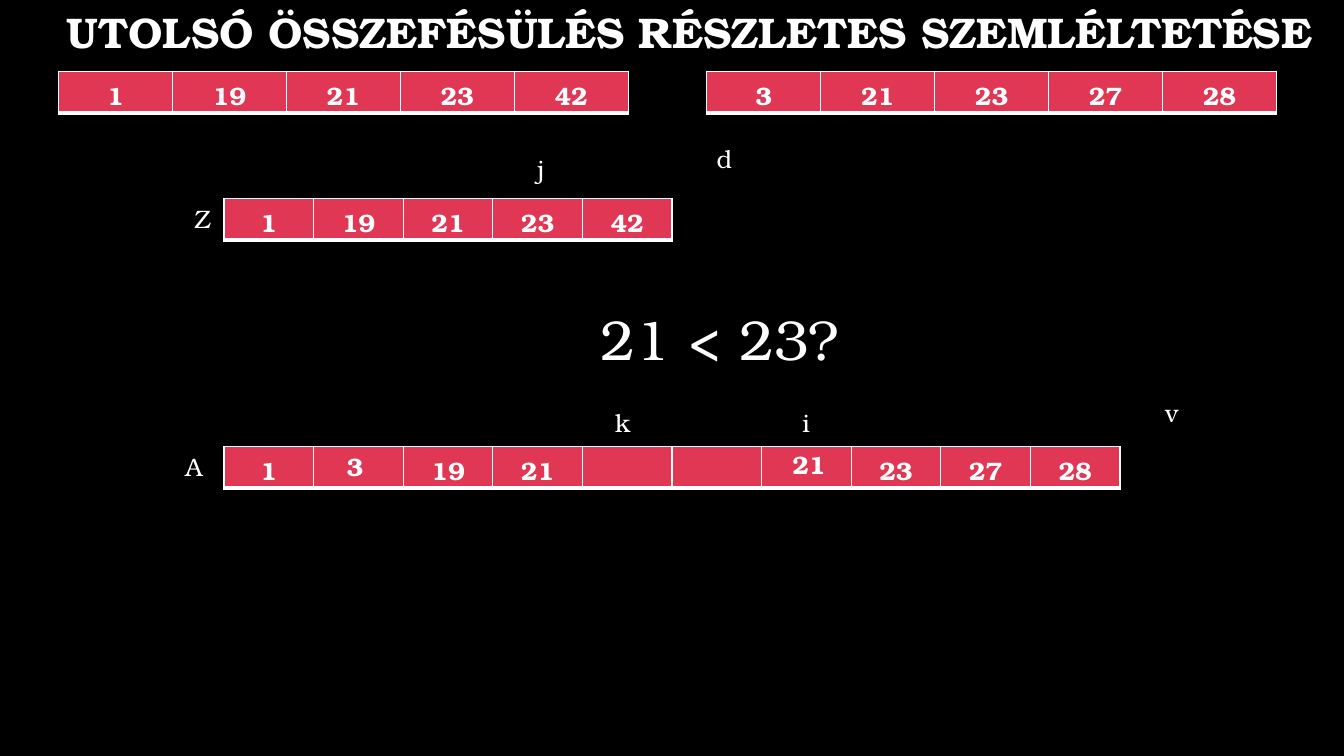
from lxml import etree
from pptx import Presentation
from pptx.dml.color import RGBColor
from pptx.enum.text import MSO_ANCHOR, PP_ALIGN
from pptx.oxml.ns import qn
from pptx.util import Inches, Pt

CENTER = PP_ALIGN.CENTER
MIDDLE = MSO_ANCHOR.MIDDLE
COLORS = {"background": "000000", "text": "FFFFFF", "cell": "E03754"}
FONT = "TeX Gyre Bonum"
WIDTH, HEIGHT = 13.33, 7.5
COLUMN = WIDTH / 15      # one cell of the merged array
HALF_COLUMN = 1.13       # one cell of the two sorted halves
ROW = 0.41
LABEL_HEIGHT = 0.4
ARRAY_LEFT = 2.5 * COLUMN
HALVES_TOP, Z_TOP, A_TOP = 0.71, 1.97, 4.43
BORDERS = {"a:lnL": 1, "a:lnR": 1, "a:lnT": 1, "a:lnB": 3}


def color(name):
    return RGBColor.from_string(COLORS[name])


def add_run(para, text, size=18, bold=False):
    span = para.add_run()
    span.text = text
    span.font.name = FONT
    span.font.size = Pt(size)
    span.font.bold = bold
    span.font.color.rgb = color("text")


def add_text(page, text, left, top, width=0.94, height=LABEL_HEIGHT,
             size=18, bold=False):
    box = page.shapes.add_textbox(
        Inches(left), Inches(top), Inches(width), Inches(height))
    box.text_frame.word_wrap = True
    add_run(box.text_frame.paragraphs[0], text, size, bold)
    return box


def add_title(page, text):
    box = add_text(page, text, 0.22, 0, 13.23, 0.68, 30.6, True)
    box.text_frame.vertical_anchor = MIDDLE
    para = box.text_frame.paragraphs[0]
    para.alignment = CENTER
    para.line_spacing = 0.9


def set_borders(cell):
    properties = cell._tc.get_or_add_tcPr()
    for position, (tag, points) in enumerate(BORDERS.items()):
        line = etree.Element(qn(tag), w=str(Pt(points)))
        fill = etree.SubElement(line, qn("a:solidFill"))
        etree.SubElement(fill, qn("a:srgbClr"), val=COLORS["text"])
        properties.insert(position, line)


def add_array(page, values, left, top, column=COLUMN):
    table = page.shapes.add_table(
        1, len(values), Inches(left), Inches(top),
        Inches(column * len(values)), Inches(ROW)).table
    table.first_row = False
    table.horz_banding = False
    for index, value in enumerate(values):
        table.columns[index].width = Inches(column)
        cell = table.cell(0, index)
        cell.fill.solid()
        cell.fill.fore_color.rgb = color("cell")
        set_borders(cell)
        para = cell.text_frame.paragraphs[0]
        para.alignment = CENTER
        if value:
            add_run(para, value, bold=True)


def main():
    deck = Presentation()
    deck.slide_width, deck.slide_height = Inches(WIDTH), Inches(HEIGHT)
    page = deck.slides.add_slide(deck.slide_layouts[6])
    page.background.fill.solid()
    page.background.fill.fore_color.rgb = color("background")

    add_title(page, "UTOLSÓ ÖSSZEFÉSÜLÉS RÉSZLETES SZEMLÉLTETÉSE")

    # Sorted halves, working copy Z and merged array A
    left_half = ["1", "19", "21", "23", "42"]
    right_half = ["3", "21", "23", "27", "28"]
    merged = ["1", "", "19", "21", "", "", "", "23", "27", "28"]
    add_array(page, left_half, 0.58, HALVES_TOP, HALF_COLUMN)
    add_array(page, right_half, 7.01, HALVES_TOP, HALF_COLUMN)
    add_array(page, left_half, ARRAY_LEFT, Z_TOP)
    add_array(page, merged, ARRAY_LEFT, A_TOP)

    # Array names
    add_text(page, "Z", 1.83, Z_TOP, 0.39)
    add_text(page, "A", 1.74, A_TOP, 0.39)

    # Index markers
    for name, left, top in [("i", 7.86, 3.99), ("j", 5.23, 1.47),
                            ("k", 6, 3.99), ("d", 7.01, 1.37),
                            ("v", 11.46, 3.89)]:
        add_text(page, name, left, top)

    # Values moving into A, and the current comparison
    add_text(page, "3", 3.34, A_TOP, 0.81, bold=True)
    add_text(page, "21", 7.76, 4.41, 0.81, bold=True)
    add_text(page, "21 < 23?", 5.86, 2.97, 4.29, 0.77, size=40)

    deck.save("out.pptx")


if __name__ == "__main__":
    main()
